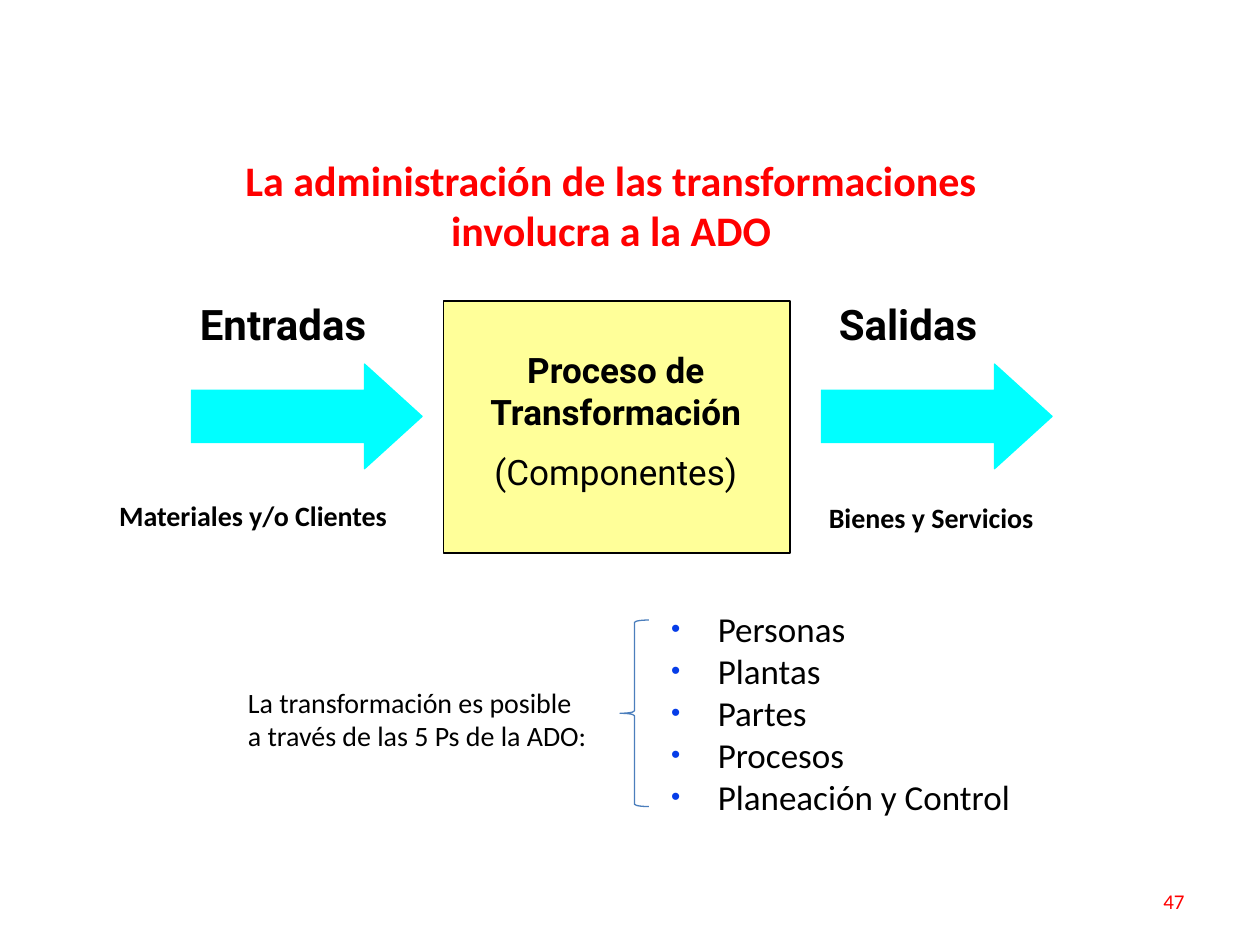
from lxml.etree import SubElement
from pptx import Presentation
from pptx.dml.color import RGBColor
from pptx.enum.shapes import MSO_SHAPE
from pptx.enum.text import MSO_ANCHOR, MSO_AUTO_SIZE, PP_ALIGN
from pptx.oxml.ns import qn
from pptx.util import Cm, Pt

COLORS = {
    "red": "FF0000",
    "black": "000000",
    "cyan": "00FFFF",
    "yellow": "FFFF99",
    "blue": "4B7EBC",
    "dot": "063DE8",
}
PARTS = ["Personas", "Plantas", "Partes", "Procesos", "Planeación y Control"]
INDENT = Cm(0.94)


def color(name):
    return RGBColor.from_string(COLORS[name])


def add_dot(para):
    """Give a paragraph a hanging indent and a small coloured bullet."""
    props = para._p.get_or_add_pPr()
    props.set("marL", str(INDENT))
    props.set("indent", str(-INDENT))
    tint = SubElement(props, qn("a:buClr"))
    SubElement(tint, qn("a:srgbClr"), val=COLORS["dot"])
    SubElement(props, qn("a:buSzPct"), val="75000")
    SubElement(props, qn("a:buFont"), typeface="Arial")
    SubElement(props, qn("a:buChar"), char="•")


def write(shape, *lines, size=16, font="Calibri", tint="black", bold=False,
          align=PP_ALIGN.LEFT, anchor=MSO_ANCHOR.TOP, gap=0, wrap=True,
          dots=False):
    """Fill a shape with one paragraph per line."""
    frame = shape.text_frame
    frame.word_wrap = wrap
    frame.auto_size = MSO_AUTO_SIZE.NONE
    frame.vertical_anchor = anchor
    for i, line in enumerate(lines):
        para = frame.add_paragraph() if i else frame.paragraphs[0]
        if dots:
            add_dot(para)
        para.alignment = align
        para.space_before = Pt(gap if i else 0)
        run = para.add_run()
        run.text = line
        run.font.name = font
        run.font.size = Pt(size)
        run.font.bold = bold
        run.font.color.rgb = color(tint)
    return frame


def add_text(slide, box, *lines, **style):
    shape = slide.shapes.add_textbox(*map(Cm, box))
    return write(shape, *lines, **style)


def add_title(slide, box, text):
    title = slide.shapes.title
    title.left, title.top, title.width, title.height = map(Cm, box)
    write(title, text, size=24, tint="red", bold=True,
          align=PP_ALIGN.CENTER, anchor=MSO_ANCHOR.MIDDLE)


def add_shape(slide, kind, box, line, fill=None):
    shape = slide.shapes.add_shape(kind, *map(Cm, box))
    shape.shadow.inherit = False
    if fill:
        shape.fill.solid()
        shape.fill.fore_color.rgb = color(fill)
    else:
        shape.fill.background()
    shape.line.color.rgb = color(line)
    shape.line.width = Pt(0.75)
    return shape


def add_flow(slide, left, head, shift):
    """Draw an arrow with its heading above."""
    arrow = add_shape(slide, MSO_SHAPE.RIGHT_ARROW,
                      (left, 7.34, 4.65, 2.11), "cyan", "cyan")
    arrow.adjustments[1] = 0.55
    add_text(slide, (left + shift, 5.9, 4.45, 1.27), head,
             size=24, font="Roboto", bold=True)


def add_process(slide):
    add_shape(slide, MSO_SHAPE.RECTANGLE, (8.94, 6.07, 6.99, 5.08),
              "black", "yellow")
    frame = add_text(slide, (9.14, 6.91, 6.55, 3.23),
                     "Proceso de Transformación", "(Componentes)",
                     size=20, font="Roboto", bold=True,
                     align=PP_ALIGN.CENTER, gap=10)
    frame.paragraphs[1].runs[0].font.bold = False


def main():
    deck = Presentation()
    deck.slide_width, deck.slide_height = Cm(25.4), Cm(19.05)
    slide = deck.slides.add_slide(deck.slide_layouts[5])

    add_title(slide, (3.58, 2.97, 17.48, 2.31),
              "La administración de las transformaciones involucra a la ADO")
    add_flow(slide, 3.86, "Entradas", -0.08)
    add_process(slide)
    add_flow(slide, 16.56, "Salidas", 0.1)
    add_text(slide, (2.11, 9.93, 5.99, 0.94), "Materiales y/o Clientes",
             bold=True, align=PP_ALIGN.CENTER)
    add_text(slide, (16.46, 9.96, 4.7, 0.94), "Bienes y Servicios",
             bold=True, wrap=False)

    add_text(slide, (4.75, 13.69, 7.42, 1.63),
             "La transformación es posible",
             "a través de las 5 Ps de la ADO:", wrap=False)
    add_shape(slide, MSO_SHAPE.LEFT_BRACE, (12.5, 12.5, 0.58, 3.76), "blue")
    add_text(slide, (13.28, 12.12, 8.74, 5.77), *PARTS, size=20, dots=True)
    add_text(slide, (18.21, 17.65, 5.92, 1.02), "47", size=12, tint="red",
             align=PP_ALIGN.RIGHT, anchor=MSO_ANCHOR.MIDDLE)
    deck.save("out.pptx")


if __name__ == "__main__":
    main()
